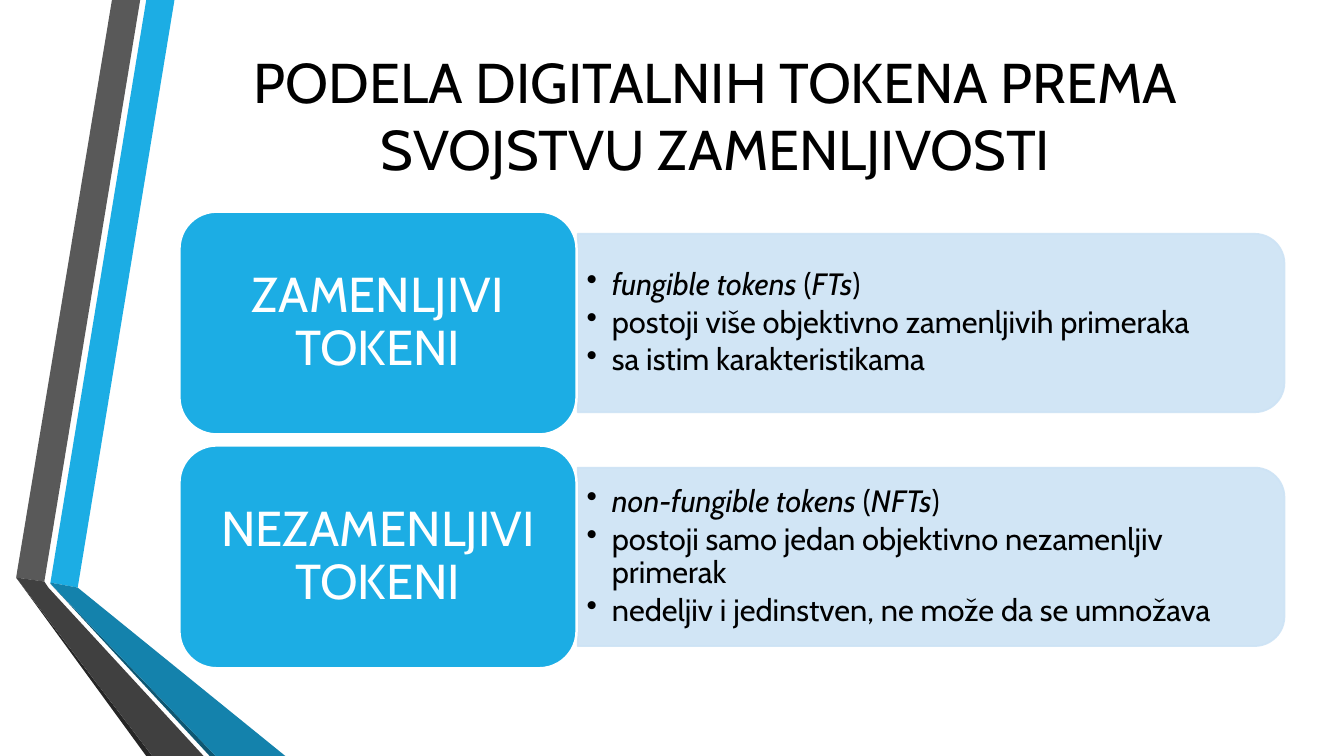
from dataclasses import dataclass

from lxml import etree
from pptx import Presentation
from pptx.dml.color import RGBColor
from pptx.enum.shapes import MSO_SHAPE
from pptx.enum.text import MSO_ANCHOR, MSO_AUTO_SIZE, PP_ALIGN
from pptx.oxml.ns import qn
from pptx.util import Inches, Pt

ROUND_RECT, ROUND_TOP = MSO_SHAPE.ROUNDED_RECTANGLE, MSO_SHAPE.ROUND_2_SAME_RECTANGLE
MIDDLE, NO_FIT = MSO_ANCHOR.MIDDLE, MSO_AUTO_SIZE.NONE
LEFT, CENTER = PP_ALIGN.LEFT, PP_ALIGN.CENTER


@dataclass(frozen=True)
class Theme:
    font: str = "Cabin"
    text: str = "000000"
    white: str = "FFFFFF"
    accent: str = "1CADE4"
    pale: str = "CDE3F5"
    ribbon_blue: str = "1482AC"
    ribbon_blue_edge: str = "0E5772"
    ribbon_gray: str = "595959"
    ribbon_dark: str = "404040"
    ribbon_dark_edge: str = "262626"
    title_size: float = 40
    card_size: float = 35
    body_size: float = 22


def add_text(p, text, font, size, color, italic=False):
    """Append a formatted run to a paragraph."""
    r = p.add_run()
    r.text = text
    r.font.name, r.font.size, r.font.italic = font, Pt(size), italic
    r.font.color.rgb = RGBColor.from_string(color)


class Deck:
    """Draw on the current slide, with lengths in percent of its size."""

    def __init__(self, theme):
        """Open a presentation with one title-only slide."""
        self.theme = theme
        self.prs = Presentation()
        self.prs.slide_width, self.prs.slide_height = Inches(13.33), Inches(7.5)
        self.s = self.prs.slides.add_slide(self.prs.slide_layouts[5])

    def x(self, share):
        """Convert a percentage of the slide width."""
        return round(self.prs.slide_width * share / 100)

    def y(self, share):
        """Convert a percentage of the slide height."""
        return round(self.prs.slide_height * share / 100)

    def box(self, left, top, width, height):
        """Convert a rectangle given in percent."""
        return self.x(left), self.y(top), self.x(width), self.y(height)

    def frame(self, tf, dx=0.1, dy=0.05):
        """Prepare a wrapped, vertically centred text frame."""
        tf.word_wrap, tf.auto_size, tf.vertical_anchor = True, NO_FIT, MIDDLE
        tf.margin_left = tf.margin_right = Inches(dx)
        tf.margin_top = tf.margin_bottom = Inches(dy)
        return tf

    def paint(self, sp, fill, line=None, width=0, opacity=None):
        """Set fill, line and opacity, and drop the shadow."""
        sp.shadow.inherit = False
        sp.fill.solid()
        sp.fill.fore_color.rgb = RGBColor.from_string(fill)
        if line:
            sp.line.color.rgb = RGBColor.from_string(line)
            sp.line.width = Pt(width)
        else:
            sp.line.fill.background()
        if opacity:
            for color in sp._element.spPr.iter(qn("a:srgbClr")):
                etree.SubElement(color, qn("a:alpha"), val=str(opacity * 1000))

    def ribbon(self, fill, points):
        """Draw a closed polygon of the side decoration."""
        pts = [(self.x(px), self.y(py)) for px, py in points]
        fb = self.s.shapes.build_freeform(*pts[0])
        fb.add_line_segments(pts[1:], close=True)
        self.paint(fb.convert_to_shape(), fill)

    def title(self, text, *place):
        """Place and fill the title placeholder."""
        sp = self.s.shapes.title
        sp.left, sp.top, sp.width, sp.height = self.box(*place)
        p = self.frame(sp.text_frame).paragraphs[0]
        p.alignment = CENTER
        add_text(p, text, self.theme.font, self.theme.title_size, self.theme.text)

    def panel(self, *place):
        """Draw a pale panel rounded on its right side."""
        left, top, width, height = self.box(*place)
        shift = (width - height) // 2
        sp = self.s.shapes.add_shape(ROUND_TOP, left + shift, top - shift, height, width)
        sp.rotation = 90
        self.paint(sp, self.theme.pale, self.theme.pale, 1.25, opacity=90)

    def bullets(self, items, *place):
        """Write a bulleted list whose items are lists of (text, italic)."""
        tf = self.frame(self.s.shapes.add_textbox(*self.box(*place)).text_frame, 0.09)
        for i, runs in enumerate(items):
            p = tf.add_paragraph() if i else tf.paragraphs[0]
            p.level, p.alignment = 1, LEFT
            p.line_spacing, p.space_after = 0.9, Pt(3.3)
            pPr = p._p.get_or_add_pPr()
            pPr.set("marL", str(Inches(0.25)))
            pPr.set("indent", str(-Inches(0.25)))
            etree.SubElement(pPr, qn("a:buChar"), char="•")
            for text, italic in runs:
                add_text(p, text, self.theme.font, self.theme.body_size,
                         self.theme.text, italic)

    def card(self, text, *place):
        """Draw a rounded heading card."""
        sp = self.s.shapes.add_shape(ROUND_RECT, *self.box(*place))
        self.paint(sp, self.theme.accent, self.theme.white, 1.75)
        p = self.frame(sp.text_frame, 0.15, 0.07).paragraphs[0]
        p.alignment, p.line_spacing = CENTER, 0.9
        add_text(p, text, self.theme.font, self.theme.card_size, self.theme.white)


def main():
    """Build and save the token slide."""
    theme = Theme()
    deck = Deck(theme)
    ribbons = [
        (theme.accent, [(3.75, 77.07), (5.78, 77.73), (12.98, 0), (10.88, 0)]),
        (theme.ribbon_gray, [(10.43, 0), (8.33, 0), (1.2, 76.4), (3.3, 76.93)]),
        (theme.ribbon_dark_edge, [(1.2, 76.4), (10.88, 100), (11.33, 100)]),
        (theme.ribbon_blue_edge, [(3.75, 77.2), (15.6, 100), (16.05, 100)]),
        (theme.ribbon_blue, [(3.75, 77.07), (3.75, 77.2), (16.05, 100),
                             (21.23, 100), (5.78, 77.73)]),
        (theme.ribbon_dark, [(15.15, 100), (3.6, 77.73), (3.3, 76.93),
                             (1.2, 76.4), (11.33, 100)]),
    ]
    for fill, points in ribbons:
        deck.ribbon(fill, points)
    deck.title("PODELA DIGITALNIH TOKENA PREMA SVOJSTVU ZAMENLJIVOSTI",
               12.15, 2.4, 82.2, 25.6)

    tokens = [
        ("ZAMENLJIVI TOKENI", "fungible tokens ", "FTs",
         ["postoji više objektivno zamenljivih primeraka",
          "sa istim karakteristikama"]),
        ("NEZAMENLJIVI TOKENI", "non-fungible tokens ", "NFTs",
         ["postoji samo jedan objektivno nezamenljiv primerak",
          "nedeljiv i jedinstven, ne može da se umnožava"]),
    ]
    first_top, pitch, card_h, panel_h, list_h = 28, 30.93, 29.47, 23.6, 21.33
    card_left, card_w, panel_left, panel_w, list_w = 13.35, 29.55, 42.98, 52.59, 52
    for row, (heading, term, short, facts) in enumerate(tokens):
        top = first_top + row * pitch
        middle = top + card_h / 2
        items = [[(term, True), ("(", False), (short, True), (")", False)]]
        items += [[(fact, False)] for fact in facts]
        deck.panel(panel_left, middle - panel_h / 2, panel_w, panel_h)
        deck.bullets(items, panel_left, middle - list_h / 2, list_w, list_h)
        deck.card(heading, card_left, top, card_w, card_h)
    deck.prs.save("out.pptx")


if __name__ == "__main__":
    main()
